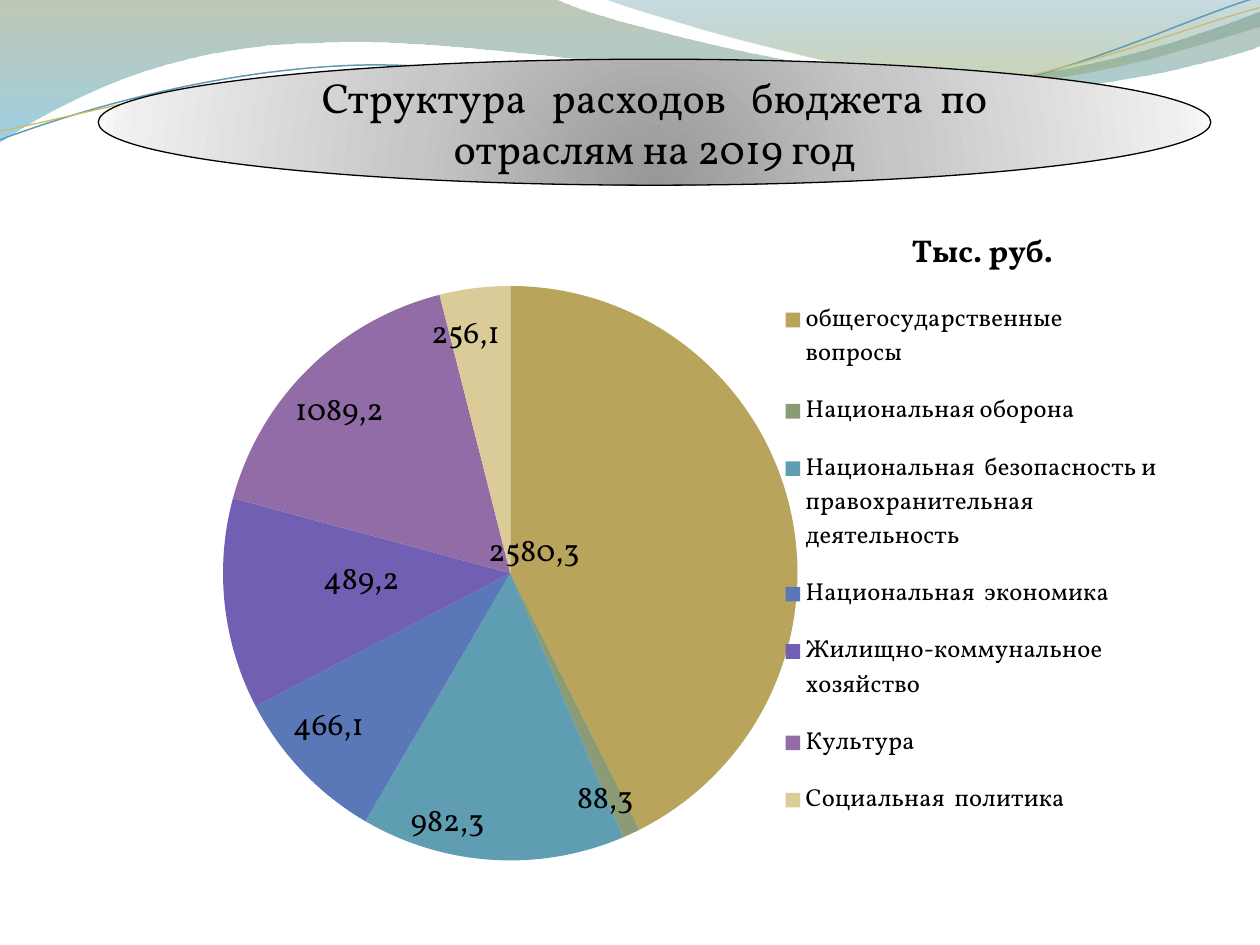
from pptx import Presentation
from pptx.chart.data import CategoryChartData
from pptx.dml.color import RGBColor
from pptx.enum.chart import XL_CHART_TYPE, XL_LABEL_POSITION, XL_LEGEND_POSITION
from pptx.enum.shapes import MSO_SHAPE
from pptx.enum.text import MSO_ANCHOR, PP_ALIGN
from pptx.oxml import parse_xml
from pptx.oxml.ns import nsdecls
from pptx.util import Inches, Pt

FACE = "Vollkorn"
WAVES = [
    ([(0, -0.01), (4.4, -0.01),
      [(4.76, 0.17), (6.64, 0.63), (7.58, 0.63)],
      [(8.53, 0.63), (9.58, 0.26), (10, 0.09)], (10.01, 0.36),
      [(9.83, 0.44), (8.7, 0.76), (7.46, 0.75)],
      [(6.22, 0.75), (3.82, 0.28), (2.57, 0.34)],
      [(1.29, 0.35), (0.46, 0.83), (-0.01, 1.13)]],
     [(0, "74855E", 45), (100, "4AACCE", 55)]),
    ([(4.79, -0.01),
      [(5.09, 0.11), (6.82, 0.62), (7.69, 0.65)],
      [(8.56, 0.69), (9.61, 0.32), (10, 0.21)], (10, 0)],
     [(0, "45889F", 30), (80, "8AA36D", 45)]),
]
LINES = [
    ([(0, 1.11),
      [(0.48, 0.93), (1.58, 0.57), (2.77, 0.52)],
      [(3.95, 0.47), (5.93, 0.89), (7.13, 0.8)],
      [(8.33, 0.71), (9.38, 0.15), (9.98, -0.02)]], "5E9CB1", 0.85),
    ([(0, 1.04),
      [(0.47, 0.96), (1.64, 0.61), (2.83, 0.56)],
      [(4.03, 0.51), (5.97, 0.83), (7.17, 0.75)],
      [(8.36, 0.67), (9.41, 0.21), (10, 0.06)]], "CEB966", 0.75),
]
INNER, MID = XL_LABEL_POSITION.INSIDE_END, XL_LABEL_POSITION.CENTER
SECTORS = [
    ("общегосударственные вопросы", 43, "2580,3", "B8A45B", MID, -0.92, 0.11),
    ("Национальная оборона", 1, "88,3", "8A9B75", INNER, 0.04, -0.03),
    ("Национальная  безопасность и правохранительная  деятельность",
     15, "982,3", "5F9DB2", INNER, -0.36, -0.05),
    ("Национальная  экономика", 9, "466,1", "5A77B8", INNER, -0.12, -0.13),
    ("Жилищно-коммунальное  хозяйство", 12, "489,2", "715FB3", MID, -0.05, -0.06),
    ("Культура", 17, "1089,2", "916CA6", INNER, -0.15, 0.13),
    ("Социальная  политика", 4, "256,1", "DACB99", INNER, -0.35, 0.14),
]


def rgb(code):
    return RGBColor.from_string(code)


def style(font, size, bold=False, color="000000"):
    font.name, font.size, font.bold = FACE, Pt(size), bold
    font.color.rgb = rgb(color)


def write(frame, text, size=18, bold=False, align=PP_ALIGN.CENTER):
    frame.text = text
    para = frame.paragraphs[0]
    para.alignment = align
    style(para.runs[0].font, size, bold)


def blend(shape, stops, course):
    shape.fill.background()
    marks = "".join(
        f'<a:gs pos="{pos * 1000}"><a:srgbClr val="{color}">'
        f'<a:alpha val="{alpha * 1000}"/></a:srgbClr></a:gs>'
        for pos, color, alpha in stops)
    props = shape._element.spPr
    props.replace(props.find("{*}noFill"), parse_xml(
        f'<a:gradFill {nsdecls("a")} rotWithShape="1">'
        f'<a:gsLst>{marks}</a:gsLst>{course}</a:gradFill>'))


def bend(shape, steps):
    parts = iter(shape._element.findall(".//{*}lnTo"))
    for step in steps[1:]:
        first = next(parts)
        if isinstance(step, tuple):
            continue
        curve = parse_xml(f'<a:cubicBezTo {nsdecls("a")}/>')
        others = [next(parts), next(parts)]
        track = first.getparent()
        track.replace(first, curve)
        for part in (first, *others):
            curve.append(part[0])
        for part in others:
            track.remove(part)


def draw(slide, steps, left, top, close):
    spots = [spot for step in steps
             for spot in ([step] if isinstance(step, tuple) else step)]
    points = [(Inches(left + x), Inches(top + y)) for x, y in spots]
    pen = slide.shapes.build_freeform(*points[0], scale=1.0)
    pen.add_line_segments(points[1:], close=close)
    shape = pen.convert_to_shape()
    shape.shadow.inherit = False
    bend(shape, steps)
    return shape


def add_waves(slide, left, top):
    for steps, stops in WAVES:
        wave = draw(slide, steps, left, top, True)
        blend(wave, stops, '<a:lin ang="5400000" scaled="1"/>')
        wave.line.fill.background()
    for steps, color, width in LINES:
        line = draw(slide, steps, left, top, False)
        line.fill.background()
        line.line.color.rgb = rgb(color)
        line.line.width = Pt(width)


def add_title(slide, left, top, width, height):
    oval = slide.shapes.add_shape(MSO_SHAPE.OVAL, Inches(left), Inches(top),
                                  Inches(width), Inches(height))
    oval.shadow.inherit = False
    blend(oval, [(0, "979797", 100), (43, "C6C6C6", 100),
                 (93, "EEEEEE", 100), (100, "F9F9F9", 100)],
          '<a:path path="circle"><a:fillToRect l="50000" t="130000" '
          'r="50000" b="-30000"/></a:path>')
    oval.line.color.rgb = rgb("000000")
    oval.line.width = Pt(0.75)
    frame = oval.text_frame
    write(frame, "Структура   расходов   бюджета  по отраслям на 2019 год", 24)
    frame.word_wrap = True
    frame.vertical_anchor = MSO_ANCHOR.MIDDLE


def layout(box, target="", edge=True, **places):
    marks = {"layoutTarget": target} if target else {}
    if edge:
        marks.update(xMode="edge", yMode="edge")
    for key, size in places.items():
        marks[key] = Inches(size) / Inches(box[key in "yh"])
    inner = "".join(f'<c:{key} val="{val}"/>' for key, val in marks.items())
    return parse_xml(f'<c:layout {nsdecls("c")}><c:manualLayout>{inner}'
                     '</c:manualLayout></c:layout>')


def put(node, after, item):
    for old in node.findall("{*}layout"):
        node.remove(old)
    prior = node.find("{*}" + after) if after else None
    node.insert(0 if prior is None else node.index(prior) + 1, item)


def add_pie(slide, left, top, width, height):
    box = width, height
    data = CategoryChartData()
    data.categories = [row[0] for row in SECTORS]
    data.add_series("Тыс. руб.", [row[1] for row in SECTORS])
    chart = slide.shapes.add_chart(
        XL_CHART_TYPE.PIE, Inches(left), Inches(top),
        Inches(width), Inches(height), data).chart
    style(chart.font, 18)
    chart.has_title = True
    write(chart.chart_title.text_frame, "Тыс. руб.", 18, True)
    chart.chart_title.include_in_layout = False
    put(chart.chart_title._element, "tx", layout(box, x=7.03, y=0.13))
    chart.has_legend = True
    legend = chart.legend
    legend.position = XL_LEGEND_POSITION.RIGHT
    legend.include_in_layout = False
    style(legend.font, 14)
    put(legend._element, "legendPos", layout(box, x=6.07, y=0.58, w=3, h=4.45))
    plot = chart.plots[0]
    plot.vary_by_categories = True
    put(chart._chartSpace.chart.plotArea, None,
        layout(box, "inner", x=1.35, y=0.63, w=5.08, h=4.56))
    for n, (_, _, text, color, place, right, down) in enumerate(SECTORS):
        point = plot.series[0].points[n]
        point.format.fill.solid()
        point.format.fill.fore_color.rgb = rgb(color)
        point.format.line.fill.background()
        label = point.data_label
        write(label.text_frame, text)
        label.position = place
        node = plot.series[0]._element.findall(".//{*}dLbl")[n]
        put(node, "idx", layout(box, edge=False, x=right, y=down))


def main():
    deck = Presentation()
    deck.slide_width, deck.slide_height = Inches(10), Inches(7.5)
    slide = deck.slides.add_slide(deck.slide_layouts[6])
    add_waves(slide, 0, 0)
    add_title(slide, 0.78, 0.47, 8.83, 1)
    add_pie(slide, 0.16, 1.64, 9.14, 5.47)
    deck.save("out.pptx")


if __name__ == "__main__":
    main()
